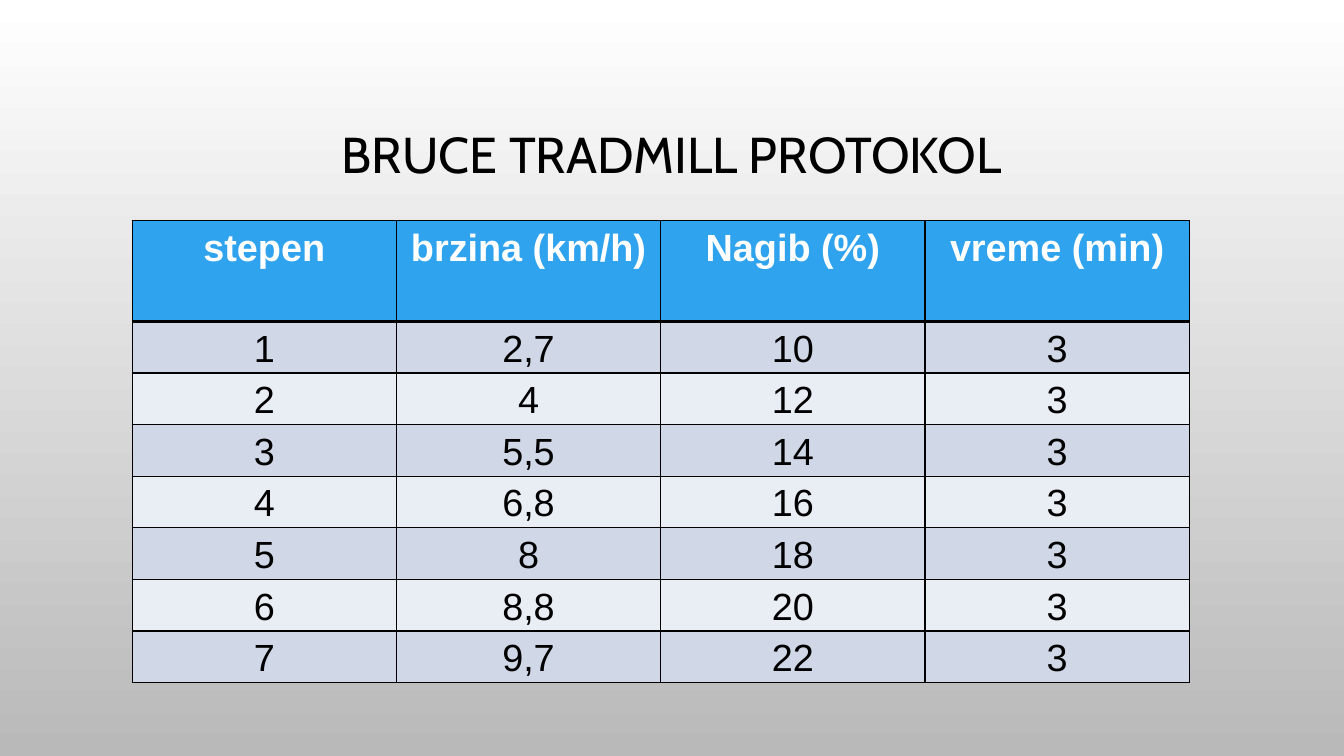
from dataclasses import dataclass

from lxml.etree import SubElement
from pptx import Presentation
from pptx.dml.color import RGBColor
from pptx.enum.text import MSO_ANCHOR, MSO_AUTO_SIZE, PP_ALIGN
from pptx.oxml.ns import qn
from pptx.util import Cm, Pt


@dataclass(frozen=True)
class Theme:
    ink: str = "000000"
    header_ink: str = "FFFFFF"
    header_fill: str = "2FA3EE"
    band_fills: tuple = ("D0D8E8", "E9EDF4")
    background: tuple = ("FFFFFF", "B9B9B9")
    title_font: str = "Cabin"
    table_font: str = "Arial"
    title_size: int = 36
    table_size: int = 27
    thin: int = 1
    thick: int = 3


THEME = Theme()
HEADINGS = ("stepen", "brzina (km/h)", "Nagib (%)", "vreme (min)")
STAGES = (
    ("1", "2,7", "10", "3"),
    ("2", "4", "12", "3"),
    ("3", "5,5", "14", "3"),
    ("4", "6,8", "16", "3"),
    ("5", "8", "18", "3"),
    ("6", "8,8", "20", "3"),
    ("7", "9,7", "22", "3"),
)


def write(frame, text, *, font, size, color=THEME.ink, bold=False,
          line_spacing=1.0, space_after=0):
    paragraph = frame.paragraphs[0]
    paragraph.alignment = PP_ALIGN.CENTER
    paragraph.line_spacing = line_spacing
    paragraph.space_before = Pt(0)
    paragraph.space_after = Pt(space_after)
    run = paragraph.add_run()
    run.text = text
    run.font.name = font
    run.font.size = Pt(size)
    run.font.bold = bold
    run.font.color.rgb = RGBColor.from_string(color)


def set_borders(cell, **widths):
    properties = cell._tc.get_or_add_tcPr()
    for side in "LRTB":
        line = SubElement(properties, qn(f"a:ln{side}"),
                          w=str(Pt(widths.get(side, THEME.thin))))
        fill = SubElement(line, qn("a:solidFill"))
        SubElement(fill, qn("a:srgbClr"), val=THEME.ink)


def paint_background(slide):
    fill = slide.background.fill
    fill.gradient()
    fill.gradient_angle = 270  # top to bottom
    for stop, color in zip(fill.gradient_stops, THEME.background):
        stop.color.rgb = RGBColor.from_string(color)


def place_title(slide, text, left, top, width, height):
    title = slide.shapes.title
    title.left, title.top, title.width, title.height = left, top, width, height
    frame = title.text_frame
    frame.word_wrap = True
    frame.auto_size = MSO_AUTO_SIZE.NONE
    frame.vertical_anchor = MSO_ANCHOR.MIDDLE
    write(frame, text, font=THEME.title_font, size=THEME.title_size,
          line_spacing=0.9)


def place_protocol(slide, left, top, width, header_height, stage_height):
    rows = (HEADINGS, *STAGES)
    height = header_height + stage_height * len(STAGES)
    protocol = slide.shapes.add_table(
        len(rows), len(HEADINGS), left, top, width, height).table
    protocol.horz_banding = False
    for column in protocol.columns:
        column.width = width // len(HEADINGS)

    for r, values in enumerate(rows):
        is_header = r == 0
        protocol.rows[r].height = header_height if is_header else stage_height
        band = THEME.header_fill if is_header else THEME.band_fills[(r - 1) % 2]
        # The rule under the headings is heavier than the grid
        edges = {0: {"B": THEME.thick}, 1: {"T": THEME.thick}}.get(r, {})
        for c, value in enumerate(values):
            cell = protocol.cell(r, c)
            cell.margin_left = cell.margin_right = Cm(0.25)
            cell.margin_top = cell.margin_bottom = 0
            set_borders(cell, **edges)
            cell.fill.solid()
            cell.fill.fore_color.rgb = RGBColor.from_string(band)
            write(cell.text_frame, value, font=THEME.table_font,
                  size=THEME.table_size, bold=is_header,
                  color=THEME.header_ink if is_header else THEME.ink,
                  line_spacing=1.15, space_after=10)


def main():
    deck = Presentation()
    deck.slide_width, deck.slide_height = Cm(33.87), Cm(19.05)
    slide = deck.slides.add_slide(deck.slide_layouts[5])

    # Background and title
    paint_background(slide)
    place_title(slide, "BRUCE TRADMILL PROTOKOL",
                Cm(2.54), Cm(1.73), Cm(28.78), Cm(4.45))

    # Stages of the protocol
    place_protocol(slide, Cm(3.33), Cm(5.56), Cm(26.64), Cm(2.54), Cm(1.3))

    deck.save("out.pptx")


if __name__ == "__main__":
    main()
